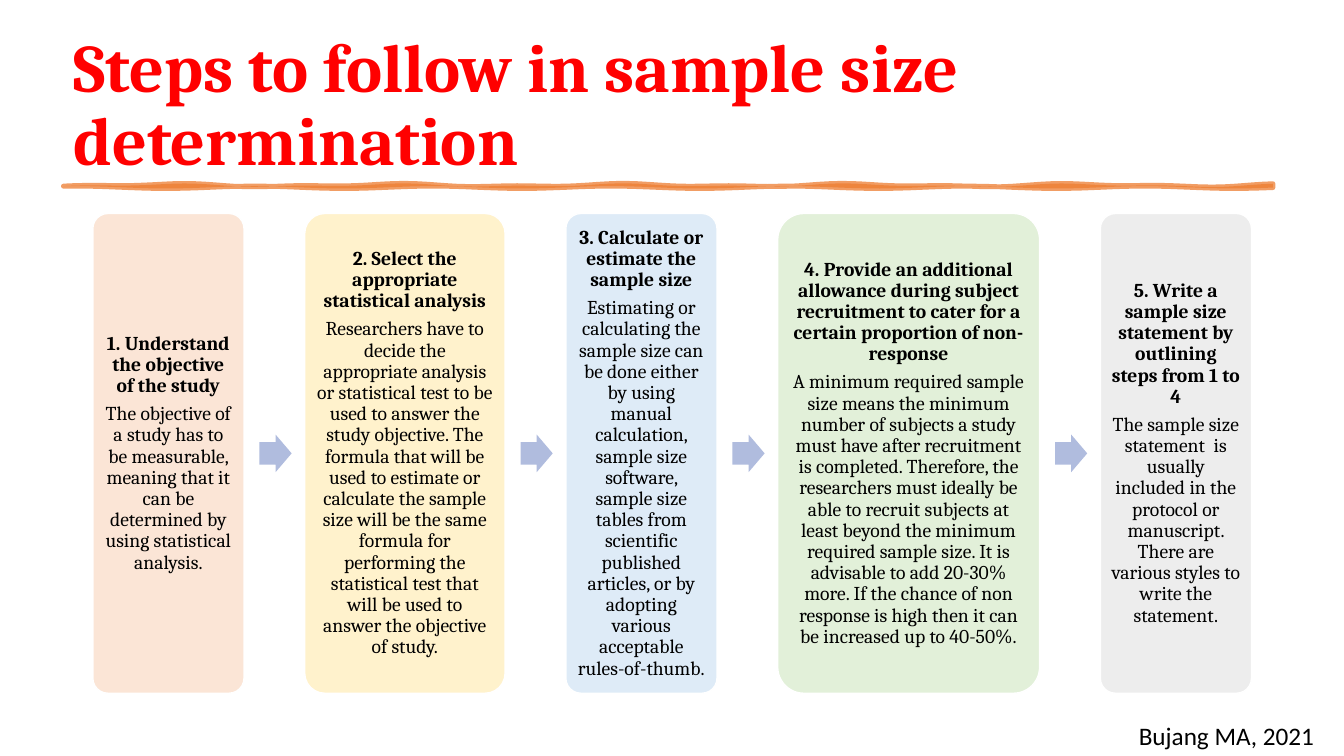
"""Build a slide showing five steps of sample size determination as cards joined by arrows."""

from dataclasses import dataclass
from math import sin
from typing import Any

from lxml.etree import SubElement
from pptx import Presentation
from pptx.dml.color import RGBColor
from pptx.enum.shapes import MSO_SHAPE
from pptx.enum.text import MSO_ANCHOR, PP_ALIGN
from pptx.oxml.ns import qn
from pptx.util import Cm, Pt

COLORS = {
    "title": "FF0000",
    "text": "000000",
    "brush": "ED7D31",
    "arrow": "B0BCDE",
    "border": "FFFFFF",
    "peach": "FBE5D6",
    "cream": "FFF2CC",
    "sky": "DEEBF7",
    "mint": "E2F0D9",
    "gray": "EDEDED",
}
TITLE_FONT = {"name": "Cambria", "size": Pt(48.6), "bold": True}
HEADING_FONT = {"name": "Cambria", "size": Pt(14), "bold": True}
BODY_FONT = {"name": "Cambria", "size": Pt(14), "bold": False}
CREDIT_FONT = {"name": "Calibri", "size": Pt(18)}
TITLE_FRAME = {"word_wrap": True, "vertical_anchor": MSO_ANCHOR.BOTTOM}
CREDIT_FRAME = {"word_wrap": True}
CARD_FRAME = {
    "word_wrap": True,
    "vertical_anchor": MSO_ANCHOR.MIDDLE,
    "margin_left": Cm(0.15),
    "margin_right": Cm(0.15),
    "margin_top": Cm(0.15),
    "margin_bottom": Cm(0.15),
}
TITLE_PARAGRAPH = {"line_spacing": 0.9}
CARD_PARAGRAPH = {"alignment": PP_ALIGN.CENTER, "line_spacing": 0.9, "space_after": Pt(4.9)}

CARD_LEFT, CARD_TOP, CARD_HEIGHT, CARD_GAP = 2.34, 5.38, 12.09, 1.53
ARROW_OFFSET, ARROW_WIDTH, ARROW_HEIGHT = 0.39, 0.81, 0.95
BRUSH_LEFT, BRUSH_TOP, BRUSH_WIDTH, BRUSH_HEIGHT = 1.6, 4.67, 30.48, 0.05


@dataclass(frozen=True)
class Step:
    """One card of the process."""

    heading: str
    body: str
    color: str
    width: float = 3.81


STEPS = [
    Step(
        "1. Understand the objective of the study",
        "The objective of a study has to be measurable, meaning that it can be "
        "determined by using statistical analysis.",
        "peach",
    ),
    Step(
        "2. Select the appropriate statistical analysis",
        "Researchers have to decide the appropriate analysis or statistical test to be "
        "used to answer the study objective. The formula that will be used to estimate or "
        "calculate the sample size will be the same formula for performing the statistical "
        "test that will be used to answer the objective of study.",
        "cream",
        5.05,
    ),
    Step(
        "3. Calculate or estimate the sample size",
        "Estimating or calculating the sample size can be done either by using manual "
        "calculation, sample size software, sample size tables from scientific published "
        "articles, or by adopting various acceptable rules-of-thumb.",
        "sky",
    ),
    Step(
        "4. Provide an additional allowance during subject recruitment to cater for a "
        "certain proportion of non-response",
        "A minimum required sample size means the minimum number of subjects a study must "
        "have after recruitment is completed. Therefore, the researchers must ideally be "
        "able to recruit subjects at least beyond the minimum required sample size. It is "
        "advisable to add 20-30% more. If the chance of non response is high then it can "
        "be increased up to 40-50%.",
        "mint",
        6.6,
    ),
    Step(
        "5. Write a sample size statement by outlining steps from 1 to 4",
        "The sample size statement  is usually included in the protocol or manuscript. "
        "There are various styles to write the statement.",
        "gray",
    ),
]


def apply_format(target: Any, values: dict[str, Any]) -> None:
    """Set each named format value on the target."""
    for name, value in values.items():
        setattr(target, name, value)


def write_span(para: Any, text: str, font: dict[str, Any], color: str) -> None:
    """Add one formatted run to a paragraph."""
    span = para.add_run()
    span.text = text
    apply_format(span.font, font)
    span.font.color.rgb = RGBColor.from_string(COLORS[color])


def paint(shape: Any, fill: str, line: str | None = None, width: float = 1) -> None:
    """Give a shape its flat fill and optional outline."""
    shape.shadow.inherit = False
    shape.fill.solid()
    shape.fill.fore_color.rgb = RGBColor.from_string(COLORS[fill])
    if line is None:
        shape.line.fill.background()
    else:
        shape.line.color.rgb = RGBColor.from_string(COLORS[line])
        shape.line.width = Pt(width)


def add_label(page: Any, place: tuple[float, ...], text: str, frame: dict[str, Any],
              paragraph: dict[str, Any], font: dict[str, Any], color: str) -> None:
    """Add a text box with a single paragraph."""
    box = page.shapes.add_textbox(*map(Cm, place))
    apply_format(box.text_frame, frame)
    para = box.text_frame.paragraphs[0]
    apply_format(para, paragraph)
    write_span(para, text, font, color)


def add_brush_line(page: Any) -> None:
    """Draw the translucent hand-painted rule below the title."""
    count = 120
    upper, lower = [], []
    for index in range(count + 1):
        x = BRUSH_LEFT + BRUSH_WIDTH * index / count
        upper.append((Cm(x), Cm(BRUSH_TOP + 0.03 * sin(1.1 * x) + 0.02 * sin(2.3 * x))))
        lower.append((Cm(x), Cm(BRUSH_TOP + BRUSH_HEIGHT + 0.03 * sin(1.4 * x + 2))))
    outline = upper + lower[::-1]
    builder = page.shapes.build_freeform(*outline[0])
    builder.add_line_segments(outline[1:], close=True)
    brush = builder.convert_to_shape()
    paint(brush, "brush", "brush", 3.5)
    for color in brush.element.spPr.iter(qn("a:srgbClr")):
        SubElement(color, qn("a:alpha"), val="75000")


def add_card(page: Any, step: Step, left: float) -> None:
    """Draw one rounded card with its heading and explanation."""
    card = page.shapes.add_shape(
        MSO_SHAPE.ROUNDED_RECTANGLE, Cm(left), Cm(CARD_TOP), Cm(step.width), Cm(CARD_HEIGHT)
    )
    card.adjustments[0] = 0.1
    paint(card, step.color, "border")
    frame = card.text_frame
    apply_format(frame, CARD_FRAME)
    heading, body = frame.paragraphs[0], frame.add_paragraph()
    for para, text, font in ((heading, step.heading, HEADING_FONT), (body, step.body, BODY_FONT)):
        apply_format(para, CARD_PARAGRAPH)
        write_span(para, text, font, "text")


def add_arrow(page: Any, left: float) -> None:
    """Draw the arrow in the gap after a card."""
    top = CARD_TOP + (CARD_HEIGHT - ARROW_HEIGHT) / 2
    arrow = page.shapes.add_shape(
        MSO_SHAPE.RIGHT_ARROW, Cm(left), Cm(top), Cm(ARROW_WIDTH), Cm(ARROW_HEIGHT)
    )
    arrow.adjustments[0] = 0.6
    arrow.adjustments[1] = 0.5
    paint(arrow, "arrow")


def main() -> None:
    """Assemble the slide and save the deck."""
    deck = Presentation()
    deck.slide_width, deck.slide_height = Cm(33.87), Cm(19.05)
    page = deck.slides.add_slide(deck.slide_layouts[6])
    add_label(page, (1.6, 0.69, 30.61, 3.98), "Steps to follow in sample size determination",
              TITLE_FRAME, TITLE_PARAGRAPH, TITLE_FONT, "title")
    add_brush_line(page)
    add_label(page, (28.45, 18.03, 5.42, 1.02), "Bujang MA, 2021",
              CREDIT_FRAME, {}, CREDIT_FONT, "text")
    left = CARD_LEFT
    for step in STEPS:
        add_card(page, step, left)
        if step is not STEPS[-1]:
            add_arrow(page, left + step.width + ARROW_OFFSET)
        left += step.width + CARD_GAP
    deck.save("out.pptx")


if __name__ == "__main__":
    main()
